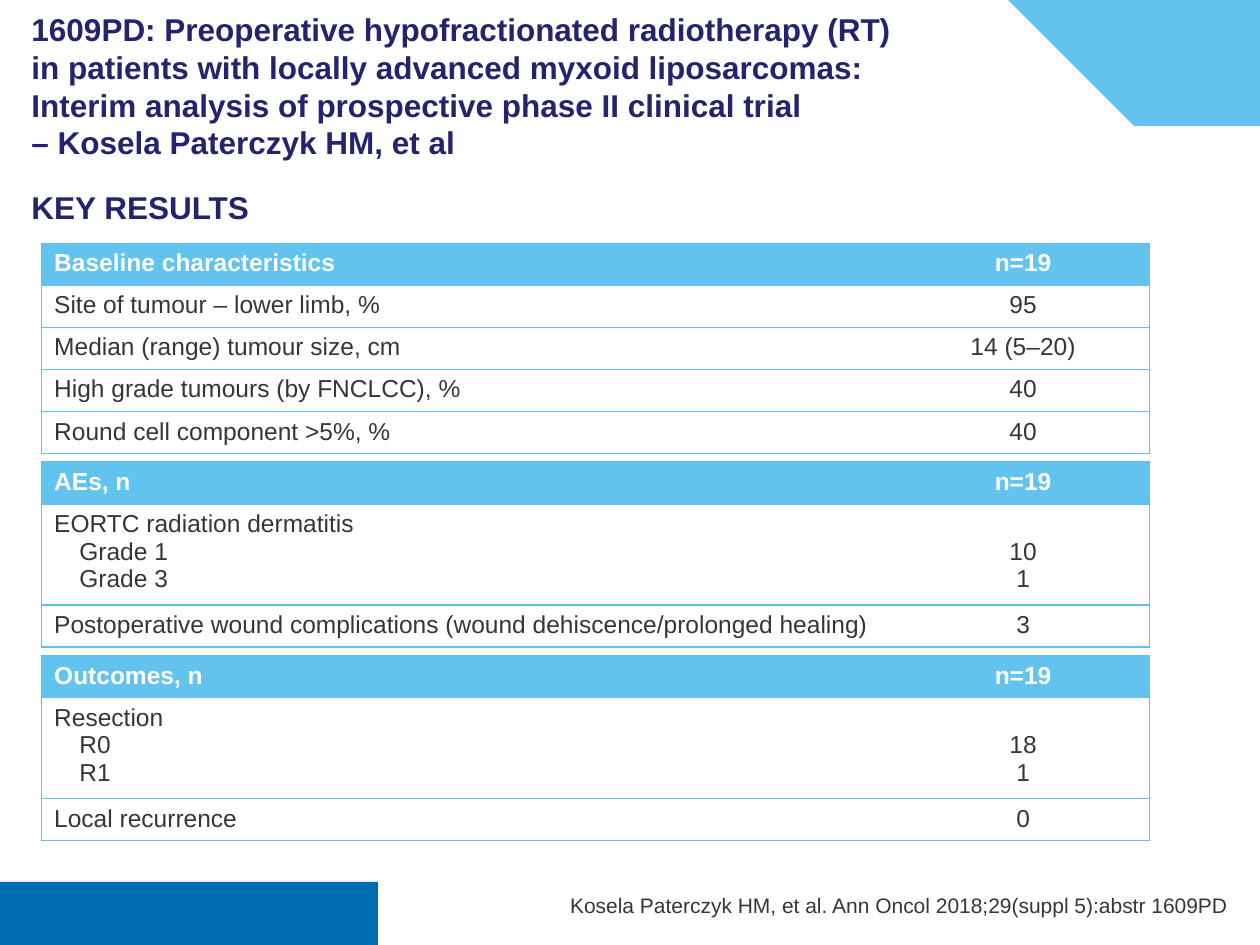
from lxml.etree import SubElement
from pptx import Presentation
from pptx.dml.color import RGBColor
from pptx.enum.text import MSO_ANCHOR, PP_ALIGN
from pptx.oxml.ns import qn
from pptx.util import Inches, Pt

# Colours
SKY = RGBColor(0x62, 0xC4, 0xEE)
BORDER = RGBColor(0x5C, 0xC1, 0xEC)
BLUE = RGBColor(0x00, 0x6D, 0xB0)
NAVY = RGBColor(0x23, 0x24, 0x6D)
GREY = RGBColor(0x36, 0x36, 0x36)
WHITE = RGBColor(0xFF, 0xFF, 0xFF)

# Content
TITLE = ("1609PD: Preoperative hypofractionated radiotherapy (RT) in patients with "
         "locally advanced myxoid liposarcomas: Interim analysis of prospective "
         "phase II clinical trial\v– Kosela Paterczyk HM, et al")
HEADING = "KEY RESULTS"
CITATION = "Kosela Paterczyk HM, et al. Ann Oncol 2018;29(suppl 5):abstr 1609PD"

# Each row: label and value; a row with a group lists its sub-items on further lines
TABLES = [
    [("Baseline characteristics", "n=19"),
     ("Site of tumour – lower limb, %", "95"),
     ("Median (range) tumour size, cm", "14 (5–20)"),
     ("High grade tumours (by FNCLCC), %", "40"),
     ("Round cell component >5%, %", "40")],
    [("AEs, n", "n=19"),
     ("EORTC radiation dermatitis\nGrade 1\nGrade 3", "10\n1"),
     ("Postoperative wound complications (wound dehiscence/prolonged healing)", "3")],
    [("Outcomes, n", "n=19"),
     ("Resection\nR0\nR1", "18\n1"),
     ("Local recurrence", "0")],
]

# Corner waves: start point, then line ends (2 numbers) or Bézier curves (6 numbers)
WAVES = [
    (SKY, (5.15, 0),
     [(10, 0), (10, 1.19), (9.93, 1.12),
      (9.89, 1.09, 9.86, 1.06, 9.82, 1.03),
      (9.17, 0.62, 8.64, 0.43, 6.08, 0.18),
      (5.77, 0.15, 5.49, 0.09, 5.23, 0.02)]),
    (BLUE, (0.67, 6.77),
     [(1.45, 6.75, 2.18, 7.19, 2.52, 7.47),
      (2.55, 7.5), (0, 7.5), (0, 6.92), (0.09, 6.88),
      (0.28, 6.81, 0.48, 6.77, 0.67, 6.77)]),
]

# Layout in inches
TABLE_LEFT, TABLE_TOP, TABLE_GAP = 0.33, 1.93, 0.07
COLUMN_WIDTHS = (6.79, 2)
ROW_HEIGHT, GROUP_ROW_HEIGHT = 1 / 3, 0.8
CELL_MARGIN, LINE_HEIGHT = 0.05, 0.22
CURVE_STEPS = 24


def curve_points(start, numbers):
    controls = [start, numbers[:2], numbers[2:4], numbers[4:]]
    for step in range(1, CURVE_STEPS + 1):
        t = step / CURVE_STEPS
        weights = ((1 - t) ** 3, 3 * t * (1 - t) ** 2, 3 * t * t * (1 - t), t ** 3)
        yield tuple(sum(w * c[axis] for w, c in zip(weights, controls)) for axis in (0, 1))


def add_wave(slide, color, start, segments):
    points = [start]
    for segment in segments:
        points.extend([segment] if len(segment) == 2 else curve_points(points[-1], segment))
    builder = slide.shapes.build_freeform(*start, scale=Inches(1))
    builder.add_line_segments(points[1:], close=True)
    wave = builder.convert_to_shape()
    wave.shadow.inherit = False
    wave.fill.solid()
    wave.fill.fore_color.rgb = color
    wave.line.fill.background()


def style_text(frame, size, color, bold=False, align=PP_ALIGN.LEFT):
    for paragraph in frame.paragraphs:
        paragraph.alignment = align
        for run in paragraph.runs:
            run.font.name = "Arial"
            run.font.size = Pt(size)
            run.font.bold = bold
            run.font.color.rgb = color


def add_text(slide, text, box, anchor, top_margin, wrap=True, **style):
    frame = slide.shapes.add_textbox(*map(Inches, box)).text_frame
    frame.word_wrap = wrap
    frame.vertical_anchor = anchor
    frame.margin_left = frame.margin_right = frame.margin_bottom = 0
    frame.margin_top = Inches(top_margin)
    frame.text = text
    style_text(frame, **style)


def set_borders(cell, hidden_side):
    properties = cell._tc.get_or_add_tcPr()
    for side in ("lnL", "lnR", "lnT", "lnB"):
        line = SubElement(properties, qn(f"a:{side}"), w=str(Pt(0.75)))
        if side == hidden_side:
            SubElement(line, qn("a:noFill"))
        else:
            fill = SubElement(line, qn("a:solidFill"))
            SubElement(fill, qn("a:srgbClr"), val=str(BORDER))


def fill_cell(cell, text, is_header, is_value, in_group):
    set_borders(cell, "lnL" if is_value else "lnR")
    cell.fill.solid()
    cell.fill.fore_color.rgb = SKY if is_header else WHITE
    cell.vertical_anchor = MSO_ANCHOR.TOP
    # Group values start one line lower, beside the first sub-item
    skipped = LINE_HEIGHT if is_value and in_group else 0
    cell.margin_top = Inches(CELL_MARGIN + skipped)
    cell.margin_bottom = Inches(CELL_MARGIN)
    cell.text_frame.text = text
    style_text(cell.text_frame, 14, WHITE if is_header else GREY, is_header,
               PP_ALIGN.CENTER if is_value else PP_ALIGN.LEFT)
    if not is_value:
        for paragraph in cell.text_frame.paragraphs[1:]:
            indent = paragraph._p.get_or_add_pPr()
            indent.set("marL", str(Inches(0.2)))
            indent.set("indent", "0")


def add_results(slide, rows, top):
    heights = [GROUP_ROW_HEIGHT if "\n" in label else ROW_HEIGHT for label, _ in rows]
    results = slide.shapes.add_table(
        len(rows), 2, Inches(TABLE_LEFT), Inches(top),
        Inches(sum(COLUMN_WIDTHS)), Inches(sum(heights))).table
    results.horz_banding = False
    for column, width in zip(results.columns, COLUMN_WIDTHS):
        column.width = Inches(width)
    for r, (row, height) in enumerate(zip(rows, heights)):
        results.rows[r].height = Inches(height)
        for c, text in enumerate(row):
            fill_cell(results.cell(r, c), text, r == 0, c == 1, "\n" in row[0])
    return top + sum(heights)


def main():
    prs = Presentation()
    prs.slide_width, prs.slide_height = Inches(10), Inches(7.5)
    slide = prs.slides.add_slide(prs.slide_layouts[6])

    # Background waves
    for color, start, segments in WAVES:
        add_wave(slide, color, start, segments)

    # Title, heading and citation
    add_text(slide, TITLE, (0.25, 0.25, 6.93, 1.03), MSO_ANCHOR.BOTTOM, 0.05,
             size=18, color=NAVY, bold=True)
    add_text(slide, HEADING, (0.25, 1.44, 9.5, 0.4), MSO_ANCHOR.TOP, 0.05,
             size=18, color=NAVY, bold=True)
    add_text(slide, CITATION, (4.49, 7.08, 5.26, 0.2), MSO_ANCHOR.BOTTOM, 0,
             wrap=False, size=12, color=GREY, align=PP_ALIGN.RIGHT)

    # Stacked result tables
    top = TABLE_TOP
    for rows in TABLES:
        top = add_results(slide, rows, top) + TABLE_GAP

    prs.save("out.pptx")


if __name__ == "__main__":
    main()
